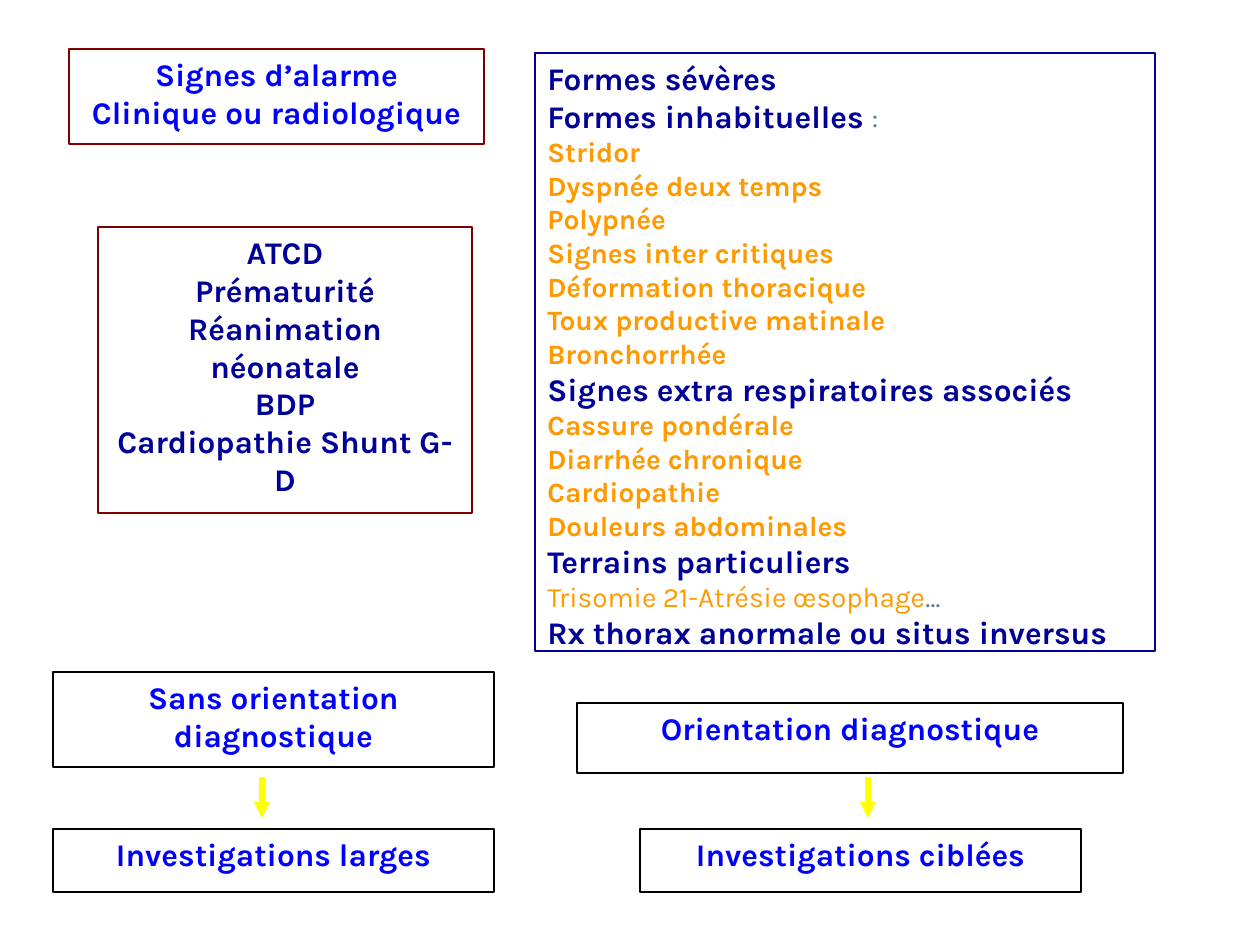
from lxml import etree
from pptx import Presentation, util as u
from pptx.dml.color import RGBColor
from pptx.enum import shapes, text
from pptx.oxml.ns import qn

HUE = {"white": "FFFFFF", "black": "000000", "red": "800000", "navy": "000099",
       "blue": "0000FF", "gold": "FF9900", "grey": "5F7791", "yellow": "FFFF00"}


def px(n):
    """Turn pixels into EMU."""
    return u.Emu(round(n * 914400 / 126))


def rgb(name):
    """Look up a colour."""
    return RGBColor.from_string(HUE[name])


def head(words):
    """Make a heading run."""
    return words, 18, "navy", True


def sign(words):
    """Make a clinical sign run."""
    return words, 16, "gold", True


def note(words, hue="grey"):
    """Make a plain run."""
    return words, 16, hue, False


def add_run(para, words, size, hue, bold):
    """Add one styled run."""
    run = para.add_run()
    run.text = words
    font = run.font
    font.name, font.size, font.bold = "Karla", u.Pt(size), bold
    font.color.rgb = rgb(hue)


def add_box(slide, area, edge, lines, align=text.PP_ALIGN.CENTER):
    """Add a bordered box with one paragraph per list of runs."""
    box = slide.shapes.add_shape(shapes.MSO_SHAPE.RECTANGLE, *map(px, area))
    box.shadow.inherit = False
    box.fill.solid()
    box.fill.fore_color.rgb = rgb("white")
    box.line.color.rgb = rgb(edge)
    box.line.width = u.Pt(0.75)
    frame = box.text_frame
    frame.word_wrap = True
    frame.vertical_anchor = text.MSO_ANCHOR.TOP
    for i, runs in enumerate(lines):
        para = frame.add_paragraph() if i else frame.paragraphs[0]
        para.alignment = align
        for run in runs:
            add_run(para, *run)


def add_label(slide, area, edge, hue, *lines):
    """Add a box of centred bold lines."""
    add_box(slide, area, edge, [[(line, 18, hue, True)] for line in lines])


def add_arrow(slide, x, top, end):
    """Add a downward arrow."""
    line = slide.shapes.add_connector(
        shapes.MSO_CONNECTOR.STRAIGHT, px(x), px(top), px(x), px(end))
    line.line.color.rgb = rgb("yellow")
    line.line.width = u.Pt(3)
    etree.SubElement(line.line._get_or_add_ln(), qn("a:tailEnd"), type="triangle")
    etree.SubElement(line._element.spPr, qn("a:effectLst"))


def main():
    """Build the slide."""
    deck = Presentation()
    deck.slide_width, deck.slide_height = px(1260), px(945)
    slide = deck.slides.add_slide(deck.slide_layouts[6])

    add_label(slide, (98, 227, 374, 286), "red", "navy", "ATCD", "Prématurité",
              "Réanimation néonatale", "BDP", "Cardiopathie Shunt G-D")
    add_label(slide, (69, 49, 415, 95), "red", "blue",
              "Signes d’alarme", "Clinique ou radiologique")

    breath = ["Stridor", "Dyspnée deux temps", "Polypnée", "Signes inter critiques",
              "Déformation thoracique", "Toux productive matinale", "Bronchorrhée"]
    other = ["Cassure pondérale", "Diarrhée chronique", "Cardiopathie",
             "Douleurs abdominales"]
    forms = [
        [head("Formes sévères")],
        [head("Formes inhabituelles "), note(":")],
        *[[sign(s)] for s in breath],
        [head("Signes extra respiratoires associés")],
        *[[sign(s)] for s in other],
        [head("Terrains particuliers")],
        [note("Trisomie 21-Atrésie œsophage", "gold"), note("…")],
        [head("Rx thorax anormale ou situs inversus")],
    ]
    add_box(slide, (535, 53, 620, 598), "navy", forms, text.PP_ALIGN.LEFT)

    for area, words in [
        ((53, 672, 441, 95), "Sans orientation diagnostique"),
        ((577, 703, 546, 70), "Orientation diagnostique"),
        ((53, 829, 441, 63), "Investigations larges"),
        ((640, 829, 441, 63), "Investigations ciblées"),
    ]:
        add_label(slide, area, "black", "blue", words)
    for x in (262, 868):
        add_arrow(slide, x, 777, 818)

    deck.save("out.pptx")


if __name__ == "__main__":
    main()
